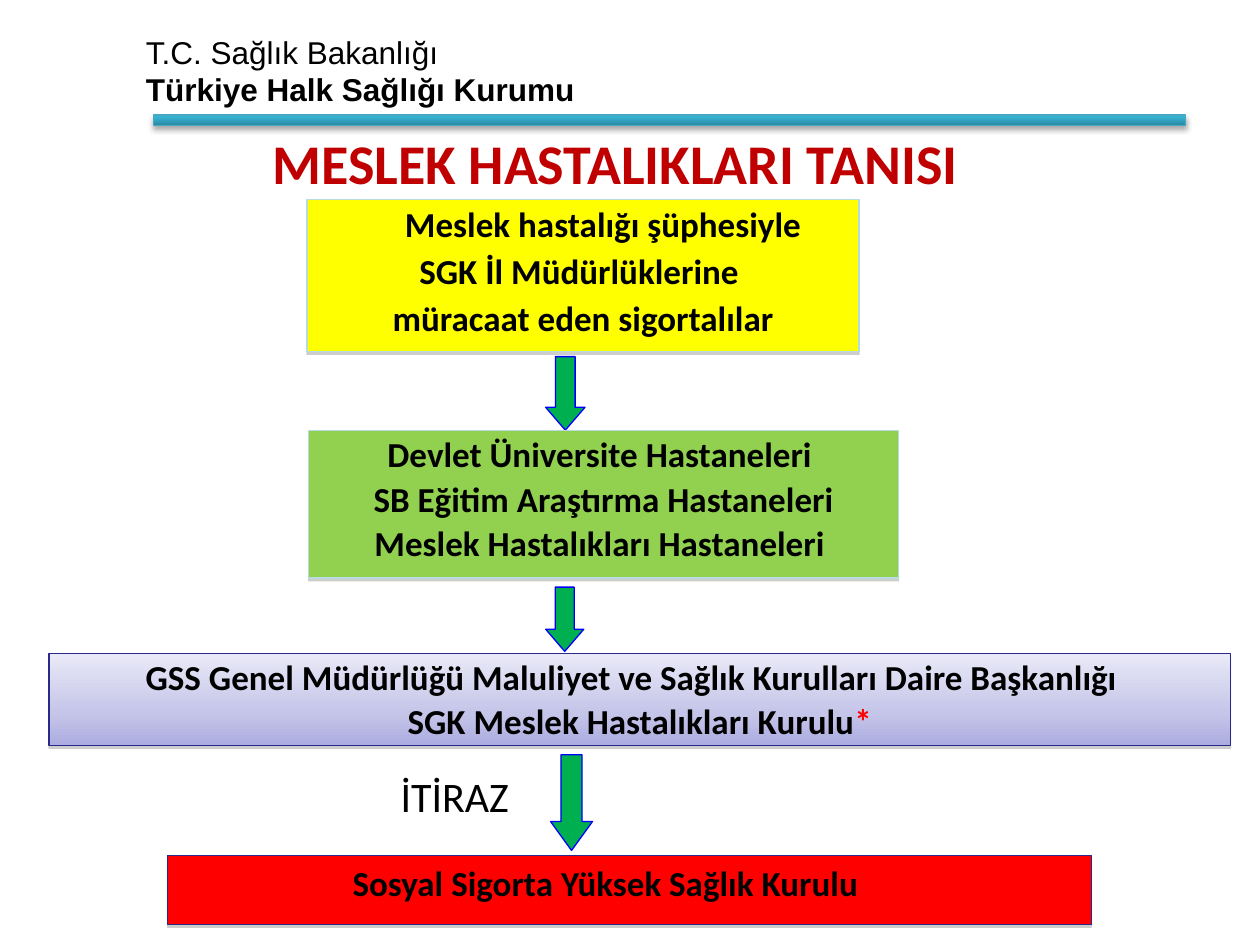
"""Build the occupational disease diagnosis flow slide."""
from copy import deepcopy
from lxml import etree
from pptx import Presentation
from pptx.dml.color import RGBColor
from pptx.enum.shapes import MSO_SHAPE
from pptx.enum.text import MSO_ANCHOR, MSO_AUTO_SIZE, PP_ALIGN
from pptx.oxml.ns import qn
from pptx.util import Pt

RECT, DOWN = MSO_SHAPE.RECTANGLE, MSO_SHAPE.DOWN_ARROW
TOP, MID = MSO_ANCHOR.TOP, MSO_ANCHOR.MIDDLE
LEFT, CENTER = PP_ALIGN.LEFT, PP_ALIGN.CENTER
FIXED = MSO_AUTO_SIZE.NONE

BLACK = RGBColor(0x00, 0x00, 0x00)
RED = RGBColor(0xFF, 0x00, 0x00)
CRIMSON = RGBColor(0xC0, 0x00, 0x00)
YELLOW = RGBColor(0xFF, 0xFF, 0x00)
LIME = RGBColor(0x92, 0xD0, 0x50)
GREEN = RGBColor(0x00, 0xB0, 0x50)
BLUE = RGBColor(0x00, 0x00, 0xFF)
NAVY = RGBColor(0x29, 0x29, 0x89)
PALE = RGBColor(0xB6, 0xDC, 0xDF)
TEAL = RGBColor(0x46, 0xAA, 0xC5)
LILAC = [(0, RGBColor(0xAC, 0xAC, 0xE1)), (0.35, RGBColor(0xC5, 0xC5, 0xE9)),
         (1, RGBColor(0xE9, 0xE9, 0xF7))]
AQUA = [(0, RGBColor(0x2A, 0x88, 0xA2)), (0.8, RGBColor(0x37, 0xB1, 0xD2)),
        (1, RGBColor(0x34, 0xB4, 0xD6))]
SOFT = ("808080", 38, 0, 1.6)
DEEP = ("000000", 35, 3.1, 1.8)


def write(para, text, font="Calibri", size=20, bold=True, color=BLACK,
          align=CENTER, line=None, before=0, left=0, right=0):
    """Add a formatted run and set the paragraph layout."""
    para.alignment = align
    para.space_before = Pt(before)
    if line:
        para.line_spacing = line
    props = para._p.get_or_add_pPr()
    props.set("marL", str(Pt(left)))
    props.set("marR", str(Pt(right)))
    props.set("indent", "0")
    run = para.add_run()
    run.text = text
    run.font.name, run.font.size = font, Pt(size)
    run.font.bold, run.font.color.rgb = bold, color


class Deck:
    """Hold the shared style and the current slide."""

    def __init__(self):
        """Open a deck with one title-only slide."""
        self.deck = Presentation()
        self.deck.slide_width, self.deck.slide_height = Pt(720), Pt(540)
        self.slide = self.deck.slides.add_slide(self.deck.slide_layouts[5])
        self.edge = Pt(0.75)

    def title(self, text, box, **style):
        """Move and fill the title placeholder."""
        head = self.slide.shapes.title
        head.left, head.top, head.width, head.height = map(Pt, box)
        frame = head.text_frame
        frame.auto_size, frame.vertical_anchor = FIXED, MID
        write(frame.paragraphs[0], text, **style)

    def fill(self, frame, rows, gap=0, **style):
        """Write one paragraph per row, each with its own format."""
        frame.word_wrap, frame.vertical_anchor = True, TOP
        for i, (text, extra) in enumerate(rows):
            para = frame.add_paragraph() if i else frame.paragraphs[0]
            write(para, text, before=gap if i else 0, **{**style, **extra})

    def label(self, box, rows, **style):
        """Add a plain text box."""
        area = self.slide.shapes.add_textbox(*map(Pt, box))
        self.fill(area.text_frame, rows, align=LEFT, **style)

    def shape(self, kind, box, paint, rim, shade=None):
        """Add a preset shape with a solid or graded fill."""
        item = self.slide.shapes.add_shape(kind, *map(Pt, box))
        if isinstance(paint, list):
            item.fill.gradient()
            item.fill.gradient_angle = 90
            stops = item._element.spPr.find(".//" + qn("a:gsLst"))
            stops.insert(1, deepcopy(stops[0]))
            for stop, (place, color) in zip(item.fill.gradient_stops, paint):
                stop.position, stop.color.rgb = place, color
        else:
            item.fill.solid()
            item.fill.fore_color.rgb = paint
        item.line.color.rgb, item.line.width = rim, self.edge
        item.shadow.inherit = False
        if shade:
            self.shade(item, *shade)
        return item

    def shade(self, item, color, alpha, blur, dist):
        """Drop a shadow straight below a shape."""
        root = item._element.spPr.find(qn("a:effectLst"))
        outer = etree.SubElement(root, qn("a:outerShdw"), blurRad=str(Pt(blur)),
                                 dist=str(Pt(dist)), dir="5400000", rotWithShape="0")
        tint = etree.SubElement(outer, qn("a:srgbClr"), val=color)
        etree.SubElement(tint, qn("a:alpha"), val=str(alpha * 1000))

    def step(self, box, paint, rim, rows, **style):
        """Add a shaded box with text and return its frame."""
        frame = self.shape(RECT, box, paint, rim, SOFT).text_frame
        self.fill(frame, rows, gap=4, **{"line": 0.9, **style})
        return frame

    def arrow(self, box, head):
        """Add a green arrow that points down."""
        item = self.shape(DOWN, box, GREEN, BLUE)
        item.adjustments[0], item.adjustments[1] = 0.5, head


def main():
    """Draw the slide and save it."""
    deck = Deck()
    deck.label((76.3, 15.1, 493, 51), [
        ("T.C. Sağlık Bakanlığı", {"bold": False}),
        ("Türkiye Halk Sağlığı Kurumu", {})], font="Arial", size=18)
    deck.shape(RECT, (87.8, 65.8, 589.7, 5.8), AQUA, TEAL, DEEP)
    deck.step((175.5, 113.8, 315.4, 87.1), YELLOW, PALE, [
        ("Meslek hastalığı şüphesiyle", {"left": 22.8}),
        ("SGK İl Müdürlüklerine", {"right": 4.5}),
        ("müracaat eden sigortalılar", {})], line=0.95)
    deck.arrow((311.8, 203.8, 22.5, 42), 0.58)
    deck.step((176.4, 246.2, 337, 84.2), LIME, PALE, [
        ("Devlet Üniversite Hastaneleri", {"right": 4.5}),
        ("SB Eğitim Araştırma Hastaneleri", {}),
        ("Meslek Hastalıkları Hastaneleri", {"right": 4.5})])
    deck.arrow((311.8, 335.5, 21.8, 36.7), 0.58)
    board = deck.step((28, 373.5, 675.2, 52.5), LILAC, NAVY, [
        ("GSS Genel Müdürlüğü Maluliyet ve Sağlık Kurulları Daire Başkanlığı",
         {"right": 9.5}),
        ("SGK Meslek Hastalıkları Kurulu", {})])
    write(board.paragraphs[1], "*", color=RED, line=0.9, before=4)
    deck.arrow((314.6, 431.3, 24, 54.7), 0.69)
    deck.label((221.8, 440, 109.4, 33.8), [("İTİRAZ", {})],
               size=24, bold=False, line=0.9)
    court = deck.step((95.8, 488.7, 527.8, 39.6), RED, NAVY, [
        ("Sosyal Sigorta Yüksek Sağlık Kurulu", {"left": 98.6})], align=LEFT)
    court.margin_top = Pt(6.5)
    deck.title("MESLEK HASTALIKLARI TANISI", (54, 72, 595.4, 41.8),
               size=32, color=CRIMSON)
    deck.deck.save("out.pptx")


if __name__ == "__main__":
    main()
